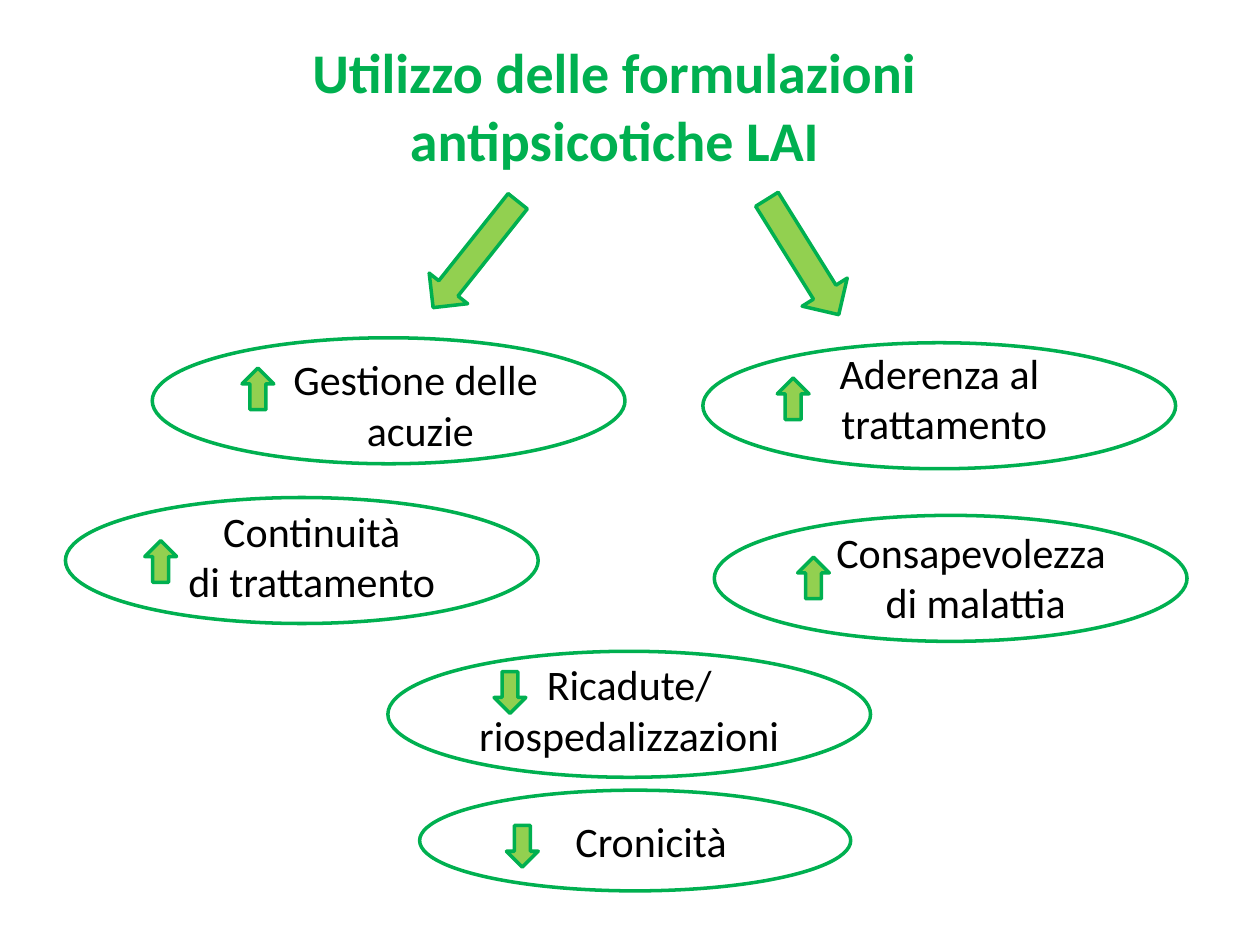
from dataclasses import dataclass

from pptx import Presentation
from pptx.dml.color import RGBColor
from pptx.enum.shapes import MSO_SHAPE as Preset
from pptx.enum.text import MSO_AUTO_SIZE as AutoSize, PP_ALIGN as Align
from pptx.util import Cm, Pt


@dataclass(frozen=True)
class Theme:
    font: str = "Calibri"
    green: RGBColor = RGBColor(0x00, 0xB0, 0x50)
    lime: RGBColor = RGBColor(0x92, 0xD0, 0x50)
    black: RGBColor = RGBColor(0x00, 0x00, 0x00)
    title_size: Pt = Pt(32)
    body_size: Pt = Pt(24)
    outline: Pt = Pt(2)


THEME = Theme()

# All lengths are in centimetres: left, top, width, height.
TITLE = "Utilizzo delle formulazioni antipsicotiche LAI"
TITLE_AREA = (4.45, 0.64, 15.88, 3)
BRANCHES = [  # area, rotation
    ((9.09, 3.76, 0.99, 2.74), 38.5),
    ((15.65, 3.81, 1.07, 2.74), 328.1),
]
OUTCOMES = [  # lines, oval area, text (left, top, width), arrow (left, top), trend
    (["Gestione delle ", "acuzie"],
     (3.07, 6.81, 9.53, 2.54), (3.61, 7.01, 9.73), (4.88, 7.42), "up"),
    (["Aderenza al ", "trattamento"],
     (14.17, 6.91, 9.53, 2.54), (14.17, 6.88, 9.73), (15.67, 7.62), "up"),
    (["Continuità", "di trattamento"],
     (1.32, 10.03, 9.53, 2.54), (1.42, 10.06, 9.73), (2.92, 10.9), "up"),
    (["Consapevolezza ", "di malattia"],
     (14.4, 10.39, 9.53, 2.54), (15.44, 10.49, 8.46), (16.08, 11.23), "up"),
    (["Ricadute/", "riospedalizzazioni"],
     (7.82, 13.13, 9.73, 2.54), (7.82, 13.16, 9.73), (9.96, 13.54), "down"),
    (["Cronicità"],
     (8.46, 15.93, 8.69, 2.03), (8.26, 16.31, 9.73), (10.21, 16.64), "down"),
]
TREND_SIZE = (0.64, 0.84)
TREND_ROTATION = {"up": 0, "down": 180}
LINE_HEIGHT, TEXT_PADDING = 1.02, 0.27


def add_outlined(page, preset, area, fill=None, rotation=0):
    shape = page.shapes.add_shape(preset, *map(Cm, area))
    shape.shadow.inherit = False
    shape.rotation = rotation
    if fill is None:
        shape.fill.background()
    else:
        shape.fill.solid()
        shape.fill.fore_color.rgb = fill
    shape.line.color.rgb = THEME.green
    shape.line.width = THEME.outline


def add_text(page, lines, area, size, color, bold=False):
    """Add a centred text box with one paragraph for each line."""
    box = page.shapes.add_textbox(*map(Cm, area))
    frame = box.text_frame
    frame.word_wrap = True
    frame.auto_size = AutoSize.SHAPE_TO_FIT_TEXT
    for index, line in enumerate(lines):
        para = frame.add_paragraph() if index else frame.paragraphs[0]
        para.alignment = Align.CENTER
        span = para.add_run()
        span.text = line
        span.font.name = THEME.font
        span.font.size = size
        span.font.bold = bold
        span.font.color.rgb = color


def add_outcome(page, lines, oval, text_place, arrow_place, trend):
    height = LINE_HEIGHT * len(lines) + TEXT_PADDING
    add_text(page, lines, (*text_place, height), THEME.body_size, THEME.black)
    add_outlined(page, Preset.OVAL, oval)
    add_outlined(page, Preset.UP_ARROW, (*arrow_place, *TREND_SIZE),
                 THEME.lime, TREND_ROTATION[trend])


def main():
    deck = Presentation()
    deck.slide_width, deck.slide_height = Cm(25.4), Cm(19.05)
    page = deck.slides.add_slide(deck.slide_layouts[6])
    add_text(page, [TITLE], TITLE_AREA, THEME.title_size, THEME.green, bold=True)
    for area, rotation in BRANCHES:
        add_outlined(page, Preset.DOWN_ARROW, area, THEME.lime, rotation)
    for outcome in OUTCOMES:
        add_outcome(page, *outcome)
    deck.save("out.pptx")


if __name__ == "__main__":
    main()
